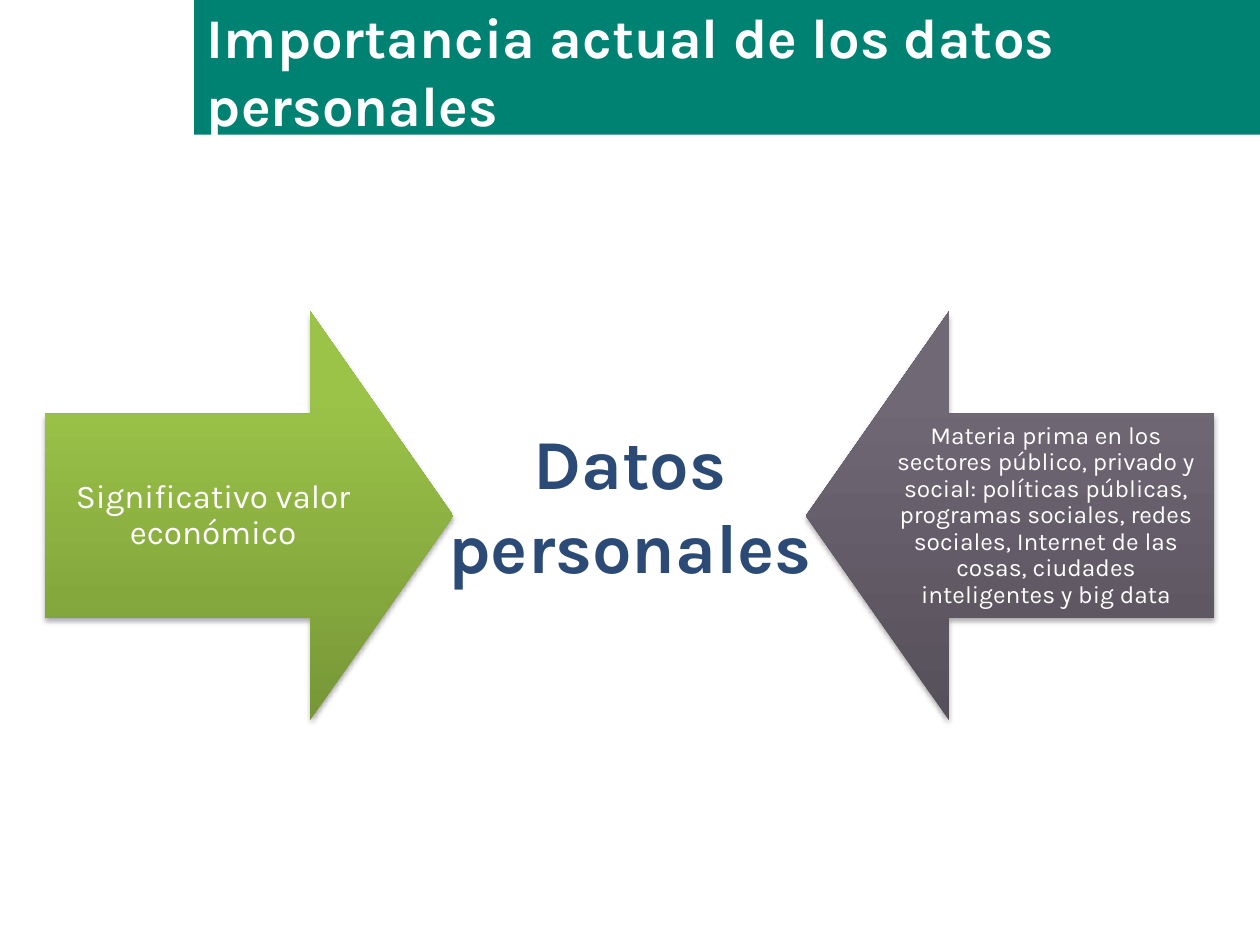
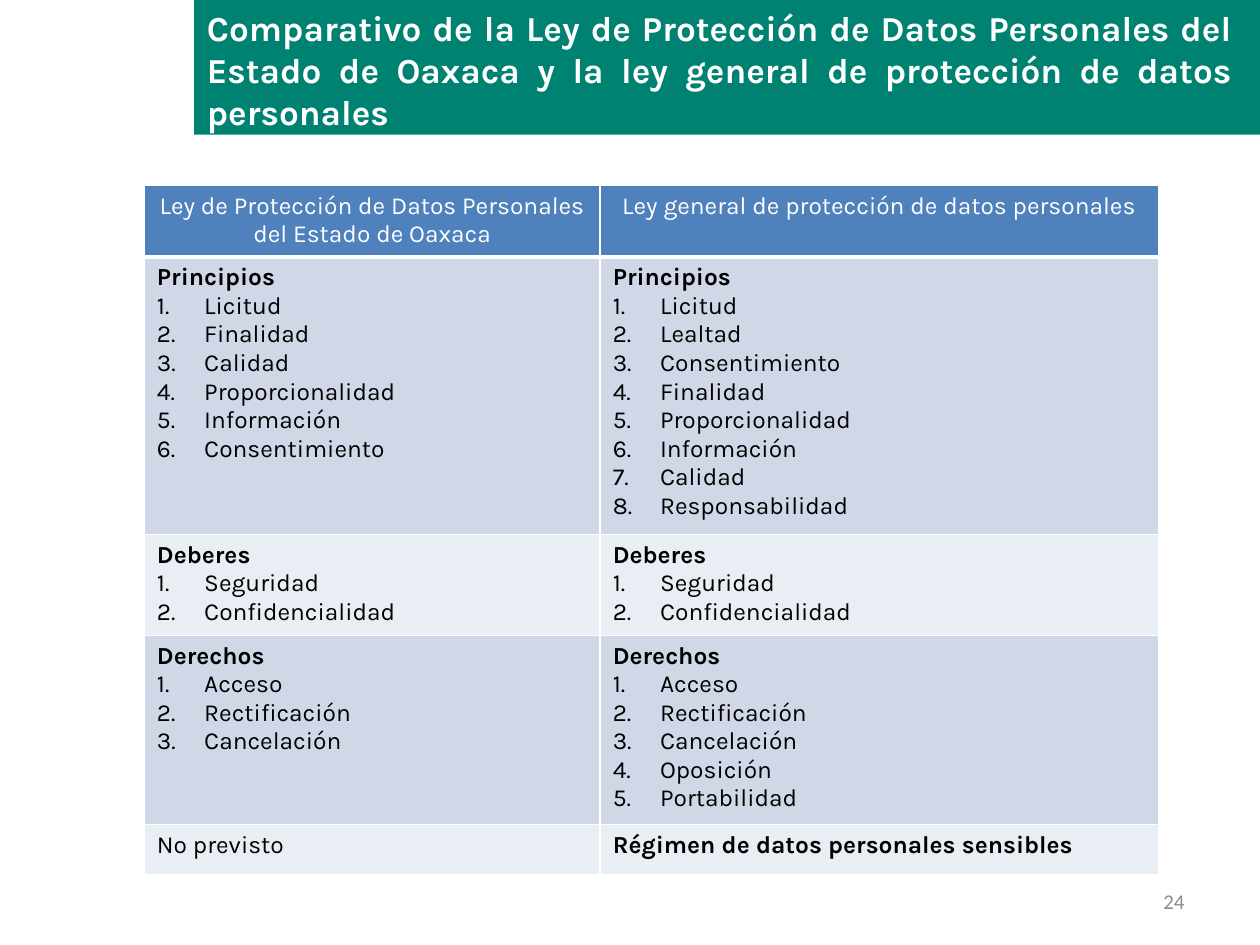
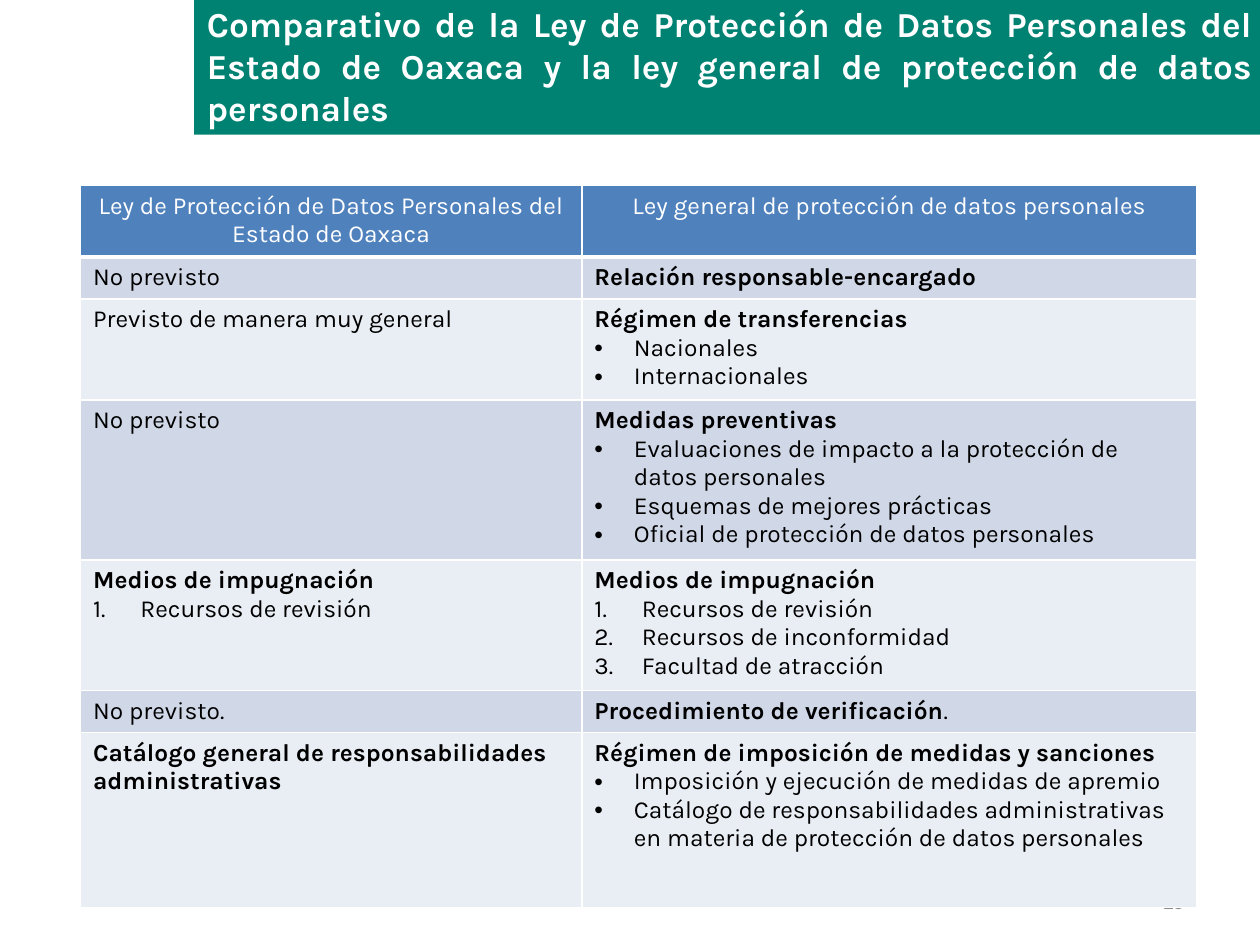
from pptx import Presentation
from pptx.dml.color import RGBColor
from pptx.enum.shapes import MSO_SHAPE
from pptx.enum.text import MSO_ANCHOR, MSO_AUTO_SIZE, PP_ALIGN
from pptx.oxml import parse_xml
from pptx.oxml.ns import nsdecls, qn
from pptx.util import Pt

WHITE, BLACK, GREEN, NAVY, GREY = "FFFFFF", "000000", "008272", "2B4A76", "8C8C8C"
HEADER, BANDS = "4F81BD", ("D0D8E8", "E9EDF4")
FONT = "Karla"
BAND_BOX = (111, 0, 609, 77)
NUMBER_BOX = (516, 500.5, 168, 28.8)
COMPARISON = ("Comparativo de la Ley de Protección de Datos Personales del Estado de Oaxaca "
              "y la ley general de protección de datos personales")
LAWS = ("Ley de Protección de Datos Personales del Estado de Oaxaca",
        "Ley general de protección de datos personales")
MARKERS = {
    "number": (27, "+mj-lt", '<a:buAutoNum {} type="arabicPeriod"/>'),
    "bullet": (22.5, "Arial", '<a:buChar {} char="•"/>'),
}


def rgb(color):
    return RGBColor.from_string(color)


def pts(values):
    return [Pt(v) for v in values]


def apply(obj, values):
    for name, value in values.items():
        setattr(obj, name, value)


def add_run(p, text, size, color, bold=False, name=FONT):
    r = p.add_run()
    r.text = text
    apply(r.font, {"name": name, "size": Pt(size), "bold": bold})
    r.font.color.rgb = rgb(color)


def add_text(s, box, text, align, anchor, **font):
    tf = s.shapes.add_textbox(*pts(box)).text_frame
    apply(tf, {"word_wrap": True, "vertical_anchor": anchor})
    p = tf.paragraphs[0]
    p.alignment = align
    add_run(p, text, **font)


def add_band(prs, s):
    band = s.shapes.add_shape(MSO_SHAPE.RECTANGLE, *pts(BAND_BOX))
    band.shadow.inherit = False
    band.fill.solid()
    band.fill.fore_color.rgb = rgb(GREEN)
    band.line.fill.background()
    band.element.nvSpPr.cNvPr.set("id", "20")
    s.slide_layout.shapes.element.insert(2, band.element)


def add_title(s, box, text, size, align):
    title = s.shapes.title
    apply(title, dict(zip(("left", "top", "width", "height"), pts(box))))
    tf = title.text_frame
    apply(tf, {"word_wrap": True, "auto_size": MSO_AUTO_SIZE.NONE,
               "vertical_anchor": MSO_ANCHOR.TOP})
    p = tf.paragraphs[0]
    p.alignment = align
    add_run(p, text, size, WHITE, bold=True)


def add_arrow(s, box, text, size, colors, mirrored=False):
    x, y, w, h = box
    outline = [(0, 0.25), (0.65, 0.25), (0.65, 0), (1, 0.5), (0.65, 1), (0.65, 0.75), (0, 0.75)]
    points = [(Pt(x + w * (1 - fx if mirrored else fx)), Pt(y + h * fy)) for fx, fy in outline]
    builder = s.shapes.build_freeform(*points[0])
    builder.add_line_segments(points[1:], close=True)
    sp = builder.convert_to_shape()

    sp.fill.gradient()
    sp.fill.gradient_angle = 90
    for stop, position, color in zip(sp.fill.gradient_stops, (0, 0.8), colors):
        stop.position = position
        stop.color.rgb = rgb(color)
    sp.line.fill.background()
    sp.shadow.inherit = False
    sp.element.spPr.find(qn("a:effectLst")).append(parse_xml(
        f'<a:outerShdw {nsdecls("a")} blurRad="{Pt(3.1)}" dist="{Pt(1.8)}" dir="5400000" '
        'rotWithShape="0"><a:srgbClr val="000000"><a:alpha val="35000"/></a:srgbClr>'
        '</a:outerShdw>'))

    left, right = (52, 11) if mirrored else (11, 52)
    tf = sp.text_frame
    apply(tf, {"word_wrap": True, "vertical_anchor": MSO_ANCHOR.MIDDLE,
               "margin_left": Pt(left), "margin_right": Pt(right),
               "margin_top": Pt(69), "margin_bottom": Pt(69)})
    p = tf.paragraphs[0]
    apply(p, {"alignment": PP_ALIGN.CENTER, "line_spacing": 0.9})
    add_run(p, text, size, WHITE)


def plain(text):
    return [(None, [(text, False)])]


def heading(text, tail=""):
    return [(None, [(text, True)] + ([(tail, False)] if tail else []))]


def listing(marker, title, *items):
    return heading(title) + [(marker, [(item, False)]) for item in items]


def set_marker(p, marker):
    indent, font, xml = MARKERS[marker]
    pPr = p._p.get_or_add_pPr()
    pPr.set("marL", str(Pt(indent)))
    pPr.set("indent", str(-Pt(indent)))
    pPr.append(parse_xml(f'<a:buFont {nsdecls("a")} typeface="{font}"/>'))
    pPr.append(parse_xml(xml.format(nsdecls("a"))))


def fill_cell(cell, content, fill, color, align, bottom):
    tcPr = cell._tc.get_or_add_tcPr()
    for side, width in zip("LRTB", (1, 1, 1, bottom)):
        tcPr.append(parse_xml(
            f'<a:ln{side} {nsdecls("a")} w="{Pt(width)}"><a:solidFill>'
            f'<a:srgbClr val="{WHITE}"/></a:solidFill></a:ln{side}>'))
    cell.fill.solid()
    cell.fill.fore_color.rgb = rgb(fill)
    tf = cell.text_frame
    for i, (marker, runs) in enumerate(content):
        p = tf.add_paragraph() if i else tf.paragraphs[0]
        if marker:
            set_marker(p, marker)
        p.alignment = align
        for text, bold in runs:
            add_run(p, text, 14, color, bold)


def add_comparison(s, origin, widths, heights, rows):
    box = (*origin, sum(widths), sum(heights))
    table = s.shapes.add_table(len(heights), len(widths), *pts(box)).table
    for column, width in zip(table.columns, widths):
        column.width = Pt(width)
    for row, height in zip(table.rows, heights):
        row.height = Pt(height)
    for j, law in enumerate(LAWS):
        fill_cell(table.cell(0, j), plain(law), HEADER, WHITE, PP_ALIGN.CENTER, 3)
    for i, row in enumerate(rows):
        for j, content in enumerate(row):
            fill_cell(table.cell(i + 1, j), content, BANDS[i % 2], BLACK, PP_ALIGN.LEFT, 1)


def importance_slide(s):
    add_title(s, (111, -2, 595.5, 85), "Importancia actual de los datos personales",
              32, PP_ALIGN.LEFT)
    add_arrow(s, (25.5, 178, 233.5, 233.5), "Significativo valor económico", 19,
              ("779737", "9BC348"))
    add_arrow(s, (460.5, 178, 233.5, 233.5),
              "Materia prima en los sectores público, privado y social: políticas públicas, "
              "programas sociales, redes sociales, Internet de las cosas, ciudades "
              "inteligentes y big data", 14, ("56505A", "706875"), mirrored=True)
    add_text(s, (241, 236, 238, 104.5), "Datos personales", PP_ALIGN.CENTER, MSO_ANCHOR.TOP,
             size=40, color=NAVY, bold=True)


def comparison_slide(s, number, title_box, origin, widths, heights, rows):
    add_title(s, title_box, COMPARISON, 20, PP_ALIGN.JUSTIFY)
    add_text(s, NUMBER_BOX, number, PP_ALIGN.RIGHT, MSO_ANCHOR.MIDDLE,
             size=12, color=GREY, name="Calibri")
    add_comparison(s, origin, widths, heights, rows)


def main():
    prs = Presentation()
    prs.slide_width, prs.slide_height = pts((720, 540))
    slides = [prs.slides.add_slide(prs.slide_layouts[5]) for _ in range(3)]
    add_band(prs, slides[0])
    importance_slide(slides[0])

    duties = listing("number", "Deberes", "Seguridad", "Confidencialidad")
    comparison_slide(
        slides[1], "24", (111, 0, 600.5, 80), (82.5, 106), (260.5, 319),
        (40.5, 158.5, 57.5, 108, 29), [
            (listing("number", "Principios", "Licitud", "Finalidad", "Calidad",
                     "Proporcionalidad", "Información", "Consentimiento"),
             listing("number", "Principios", "Licitud", "Lealtad", "Consentimiento",
                     "Finalidad", "Proporcionalidad", "Información", "Calidad",
                     "Responsabilidad")),
            (duties, duties),
            (listing("number", "Derechos", "Acceso", "Rectificación", "Cancelación"),
             listing("number", "Derechos", "Acceso", "Rectificación", "Cancelación",
                     "Oposición", "Portabilidad")),
            (plain("No previsto"), heading("Régimen de datos personales sensibles")),
        ])

    comparison_slide(
        slides[2], "25", (111, -2, 612, 80), (46, 106), (286.5, 351.5),
        (40.5, 24, 57.5, 91.5, 74.5, 24, 100), [
            (plain("No previsto"), heading("Relación responsable-encargado")),
            (plain("Previsto de manera muy general"),
             listing("bullet", "Régimen de transferencias", "Nacionales", "Internacionales")),
            (plain("No previsto"),
             listing("bullet", "Medidas preventivas",
                     "Evaluaciones de impacto a la protección de datos personales",
                     "Esquemas de mejores prácticas",
                     "Oficial de protección de datos personales")),
            (listing("number", "Medios de impugnación", "Recursos de revisión"),
             listing("number", "Medios de impugnación", "Recursos de revisión",
                     "Recursos de inconformidad", "Facultad de atracción")),
            (plain("No previsto."), heading("Procedimiento de verificación", ".")),
            (heading("Catálogo general de responsabilidades administrativas"),
             listing("bullet", "Régimen de imposición de medidas y sanciones",
                     "Imposición y ejecución de medidas de apremio",
                     "Catálogo de responsabilidades administrativas en materia de "
                     "protección de datos personales")),
        ])
    prs.save("out.pptx")


if __name__ == "__main__":
    main()
